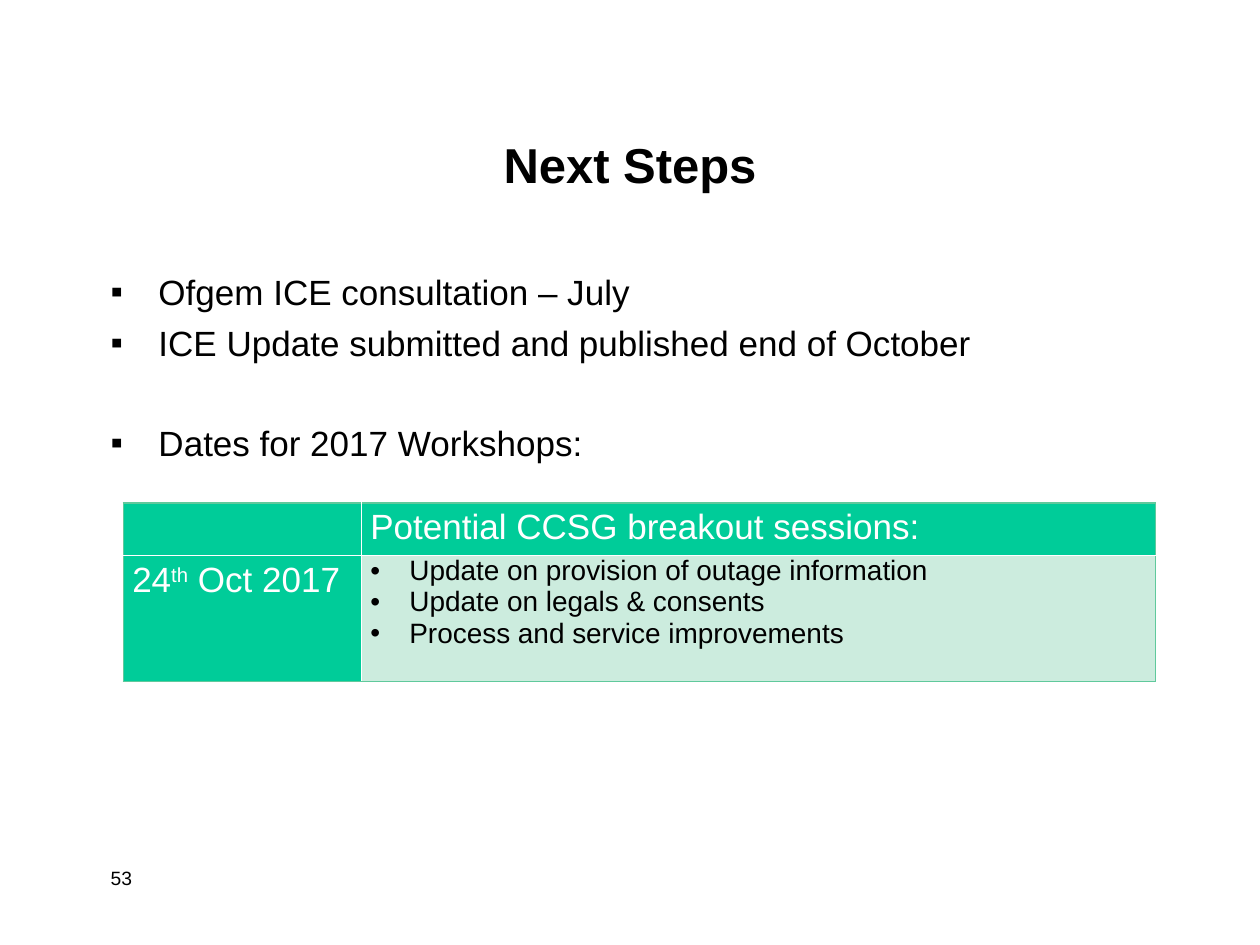
from lxml.etree import SubElement
from pptx import Presentation
from pptx.dml.color import RGBColor
from pptx.enum.text import MSO_ANCHOR, PP_ALIGN
from pptx.oxml import parse_xml
from pptx.oxml.ns import nsdecls, qn
from pptx.util import Inches, Pt

BLACK = RGBColor(0x00, 0x00, 0x00)
WHITE = RGBColor(0xFF, 0xFF, 0xFF)
GREEN = RGBColor(0x00, 0xCC, 0x99)
PALE_GREEN = RGBColor(0xCC, 0xEC, 0xDE)
EDGE_GREEN = RGBColor(0x60, 0xC9, 0x9C)
WIDTH, HEIGHT = Inches(10), Inches(7.5)
COLUMNS = (0.189, 0.63)
ROWS = (0.056, 0.1333)


def add_bullet(paragraph, character, indent):
    """Give a paragraph a hanging bullet."""
    properties = paragraph._p.get_or_add_pPr()
    properties.set("marL", str(Inches(indent)))
    properties.set("indent", str(-Inches(indent)))
    SubElement(properties, qn("a:buFont")).set("typeface", "Arial")
    SubElement(properties, qn("a:buChar")).set("char", character)


def write(frame, lines, *, size, color=BLACK, bold=False, align=PP_ALIGN.LEFT,
          bullet=None, indent=0, gaps=(), spacing=None):
    """Fill a text frame; each line is a string or a list of (text, baseline) runs."""
    frame.word_wrap = True
    for number, line in enumerate(lines):
        paragraph = frame.paragraphs[0] if number == 0 else frame.add_paragraph()
        paragraph.alignment = align
        if spacing:
            paragraph.line_spacing = spacing
        if number < len(gaps):
            paragraph.space_before = Pt(gaps[number])
        if bullet:
            add_bullet(paragraph, bullet, indent)
        for text, baseline in [(line, 0)] if isinstance(line, str) else line:
            run = paragraph.add_run()
            run.text = text
            font = run.font
            font.name, font.size, font.bold = "Arial", Pt(size), bold
            font.color.rgb = color
            if baseline:
                run._r.get_or_add_rPr().set("baseline", str(baseline * 1000))


def add_text(slide, left, top, width, height, lines, anchor=MSO_ANCHOR.TOP, **style):
    """Place a text box given in shares of the slide."""
    box = slide.shapes.add_textbox(int(WIDTH * left), int(HEIGHT * top),
                                   int(WIDTH * width), int(HEIGHT * height))
    box.text_frame.vertical_anchor = anchor
    write(box.text_frame, lines, **style)


def set_borders(cell, outer_sides):
    """Draw green lines on the outer sides of a cell and white lines inside."""
    properties = cell._tc.get_or_add_tcPr()
    for position, side in enumerate("LRTB"):
        color = EDGE_GREEN if side in outer_sides else WHITE
        properties.insert(position, parse_xml(
            f'<a:ln{side} {nsdecls("a")} w="{Pt(1)}"><a:solidFill>'
            f'<a:srgbClr val="{color}"/></a:solidFill></a:ln{side}>'))


def add_workshop_table(slide, left, top):
    """Add the table of workshop dates and sessions."""
    table = slide.shapes.add_table(
        len(ROWS), len(COLUMNS), int(WIDTH * left), int(HEIGHT * top),
        int(WIDTH * sum(COLUMNS)), int(HEIGHT * sum(ROWS))).table
    for column, share in zip(table.columns, COLUMNS):
        column.width = int(WIDTH * share)
    for row, share in zip(table.rows, ROWS):
        row.height = int(HEIGHT * share)
    for row in range(len(ROWS)):
        for column in range(len(COLUMNS)):
            cell = table.cell(row, column)
            cell.margin_left = cell.margin_right = Inches(0.07)
            cell.margin_top = cell.margin_bottom = 0
            cell.fill.solid()
            cell.fill.fore_color.rgb = PALE_GREEN if row and column else GREEN
            set_borders(cell, "LR"[column] + "TB"[row])
    heading = {"size": 20, "color": WHITE, "spacing": 1.14}
    write(table.cell(0, 1).text_frame, ["Potential CCSG breakout sessions:"], **heading)
    write(table.cell(1, 0).text_frame,
          [[("24", 0), ("th", 30), (" Oct 2017", 0)]], **heading)
    write(table.cell(1, 1).text_frame,
          ["Update on provision of outage information",
           "Update on legals & consents",
           "Process and service improvements"],
          size=16, bullet="•", indent=0.31)


def main():
    """Build and save the slide."""
    presentation = Presentation()
    presentation.slide_width, presentation.slide_height = WIDTH, HEIGHT
    slide = presentation.slides.add_slide(presentation.slide_layouts[6])
    add_text(slide, 0.075, 0.09, 0.85, 0.1667, ["Next Steps"], MSO_ANCHOR.MIDDLE,
             size=28, bold=True, align=PP_ALIGN.CENTER)
    add_text(slide, 0.078, 0.28, 0.85, 0.19,
             ["Ofgem ICE consultation – July",
              "ICE Update submitted and published end of October",
              "Dates for 2017 Workshops:"],
             size=20, bullet="▪", indent=0.38, gaps=(0, 5, 33))
    add_text(slide, 0.078, 0.91, 0.208, 0.0667, ["53"], size=11)
    add_workshop_table(slide, 0.098, 0.532)
    presentation.save("out.pptx")


if __name__ == "__main__":
    main()
